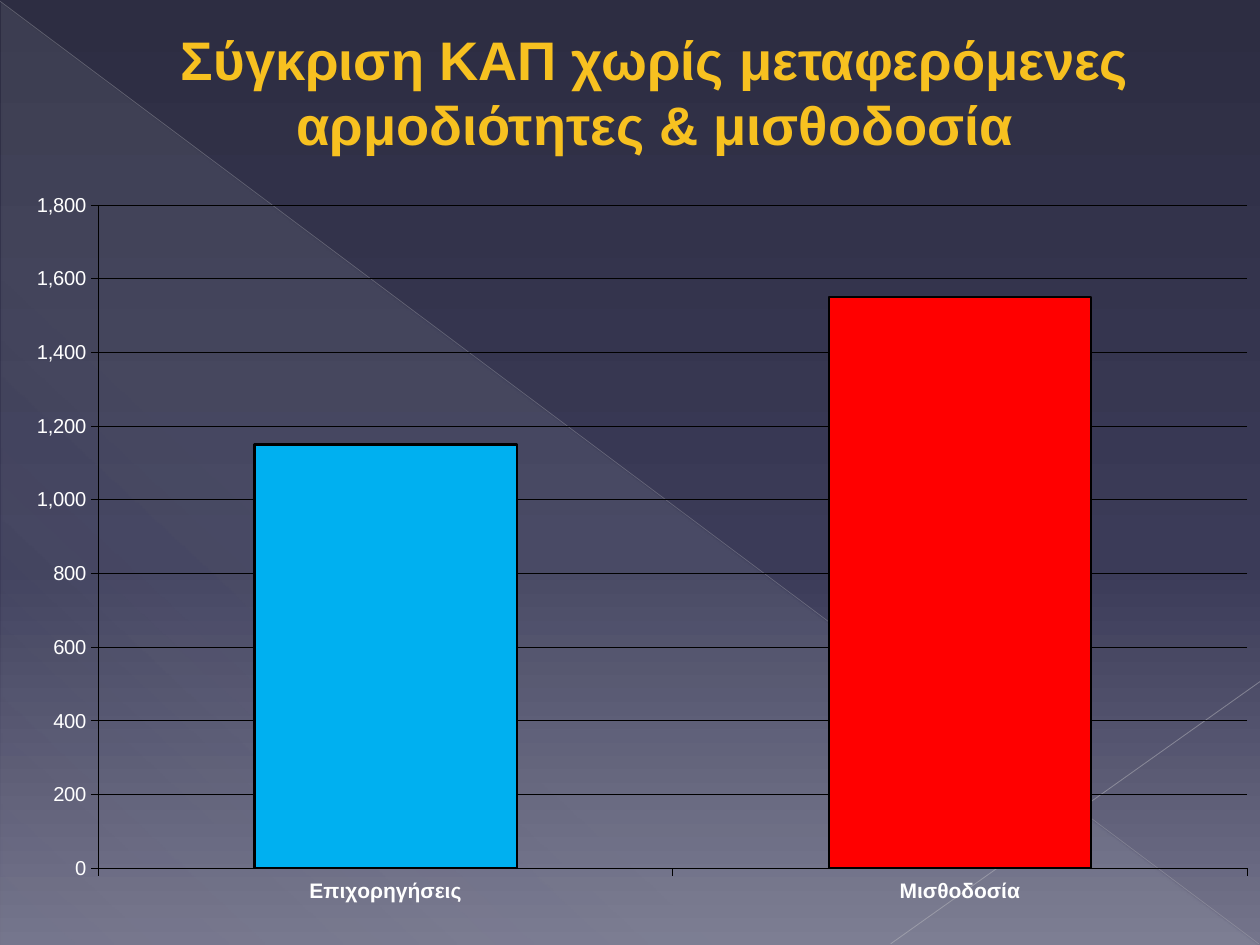
from lxml.etree import SubElement
from pptx import Presentation
from pptx.chart.data import CategoryChartData
from pptx.dml.color import RGBColor
from pptx.enum.chart import XL_CHART_TYPE as CT, XL_TICK_LABEL_POSITION as TLP, XL_TICK_MARK as TM
from pptx.enum.shapes import MSO_CONNECTOR as CONN, MSO_SHAPE as SHAPE
from pptx.enum.text import MSO_ANCHOR as ANCHOR, PP_ALIGN as ALIGN
from pptx.oxml import parse_xml
from pptx.oxml.ns import nsdecls, qn
from pptx.util import Pt

NIGHT = RGBColor(0x2D, 0x2D, 0x42)
INDIGO = RGBColor(0x3B, 0x3B, 0x58)
SLATE = RGBColor(0x74, 0x74, 0x8B)
MIST = RGBColor(0xDD, 0xE9, 0xEC)
GRAY = RGBColor(0xB8, 0xB8, 0xBC)
SILVER = RGBColor(0xC0, 0xC0, 0xC4)
GOLD = RGBColor(0xF7, 0xC1, 0x20)
STEEL = RGBColor(0x4F, 0x56, 0x71)
BLACK = RGBColor(0, 0, 0)
WHITE = RGBColor(0xFF, 0xFF, 0xFF)
LILAC = RGBColor(0x99, 0x99, 0xFF)
BLUE = RGBColor(0x00, 0xB0, 0xF0)
RED = RGBColor(0xFF, 0, 0)


class Deck:
    font = "Arial"
    hairline = Pt(0.34)

    def __init__(self, width, height):
        self.prs = Presentation()
        self.prs.slide_width, self.prs.slide_height = Pt(width), Pt(height)
        self.s = self.prs.slides.add_slide(self.prs.slide_layouts[6])

    def alpha(self, color, percent):
        SubElement(color, qn("a:alpha"), val=str(percent * 1000))

    def gradient(self, fill, element, angle, stops):
        fill.gradient()
        fill.gradient_angle = 360 - angle
        gs_list = next(element.iter(qn("a:gsLst")))
        for gs in list(gs_list):
            gs_list.remove(gs)
        for pos, rgb, opacity in stops:
            gs = SubElement(gs_list, qn("a:gs"), pos=str(pos * 1000))
            color = SubElement(gs, qn("a:srgbClr"), val=str(rgb))
            if opacity < 100:
                self.alpha(color, opacity)

    def background(self, angle, stops):
        self.gradient(self.s.background.fill, self.s.element, angle, stops)

    def triangle(self, x, y, w, h, angle, stops):
        sp = self.s.shapes.add_shape(SHAPE.RIGHT_TRIANGLE, Pt(x), Pt(y), Pt(w), Pt(h))
        sp.shadow.inherit = False
        sp.line.fill.background()
        self.gradient(sp.fill, sp.element, angle, stops)

    def line(self, x1, y1, x2, y2, rgb, width, opacity):
        cx = self.s.shapes.add_connector(CONN.STRAIGHT, Pt(x1), Pt(y1), Pt(x2), Pt(y2))
        cx.line.color.rgb, cx.line.width = rgb, Pt(width)
        sp_pr = cx.element.spPr
        self.alpha(next(sp_pr.iter(qn("a:srgbClr"))), opacity)
        SubElement(sp_pr, qn("a:effectLst"))

    def title(self, text, x, y, w, h, size, indent):
        tf = self.s.shapes.add_textbox(Pt(x), Pt(y), Pt(w), Pt(h)).text_frame
        tf.word_wrap, tf.vertical_anchor = True, ANCHOR.MIDDLE
        p = tf.paragraphs[0]
        p.alignment = ALIGN.CENTER
        p._p.get_or_add_pPr().set("marL", str(Pt(indent)))
        r = p.add_run()
        r.text = text
        self.style(r.font, size, GOLD, True)
        r.font._element.insert(0, parse_xml(
            f'<a:ln {nsdecls("a")} w="{Pt(0.5)}"><a:solidFill>'
            f'<a:srgbClr val="{STEEL}"/></a:solidFill></a:ln>'))

    def style(self, font, size, rgb, bold=False):
        font.name, font.size, font.bold = self.font, Pt(size), bold
        font.color.rgb = rgb

    def outline(self, line, width):
        line.color.rgb, line.width = BLACK, width

    def axis(self, axis, size, bold):
        axis.major_tick_mark, axis.minor_tick_mark = TM.OUTSIDE, TM.NONE
        self.style(axis.tick_labels.font, size, WHITE, bold)
        self.outline(axis.format.line, self.hairline)

    def columns(self, x, y, w, h, bars, plot_box):
        data = CategoryChartData(number_format="#,##0")
        data.categories = [name for name, _, _ in bars]
        data.add_series("Series 1", [value for _, value, _ in bars])
        chart = self.s.shapes.add_chart(
            CT.COLUMN_CLUSTERED, Pt(x), Pt(y), Pt(w), Pt(h), data).chart
        self.style(chart.font, 14.2, BLACK)
        chart.has_legend = chart.has_title = False
        plot = chart.plots[0]
        plot.gap_width, plot.vary_by_categories = 119, False
        series = plot.series[0]
        series.format.fill.solid()
        series.format.fill.fore_color.rgb = LILAC
        self.outline(series.format.line, Pt(1.35))
        for i, (_, _, rgb) in enumerate(bars):
            fmt = series.points[i].format
            fmt.fill.solid()
            fmt.fill.fore_color.rgb = rgb
            self.outline(fmt.line, Pt(1.35))
        cat, val = chart.category_axis, chart.value_axis
        self.axis(cat, 12, True)
        cat.tick_label_position = TLP.LOW
        self.axis(val, 11.5, False)
        val.minimum_scale, val.maximum_scale, val.major_unit = 0, 1800, 200
        val.tick_labels.number_format = "#,##0"
        val.tick_labels.number_format_is_linked = False
        self.outline(val.major_gridlines.format.line, self.hairline)
        self.place_plot(chart, plot_box)

    def place_plot(self, chart, box):
        area = next(chart.element.iter(qn("c:plotArea")))
        for old in area.findall(qn("c:layout")):
            area.remove(old)
        fields = [("layoutTarget", "inner"), ("xMode", "edge"), ("yMode", "edge")]
        fields += zip("xywh", box)
        inner = "".join(f'<c:{tag} val="{value}"/>' for tag, value in fields)
        area.insert(0, parse_xml(
            f'<c:layout {nsdecls("c")}><c:manualLayout>{inner}</c:manualLayout></c:layout>'))


def main():
    deck = Deck(720, 540)
    deck.background(90, [(0, NIGHT, 100), (60, INDIGO, 100), (100, SLATE, 100)])
    deck.triangle(0.7, 1.4, 718.6, 538.6, 133,
                  [(0, MIST, 10), (70, MIST, 8), (100, MIST, 1)])
    deck.line(0, 0.7, 719.3, 539.3, GRAY, 0.39, 35)
    deck.line(720, 389.5, 509, 539.3, SILVER, 0.47, 45)
    deck.title("Σύγκριση ΚΑΠ χωρίς μεταφερόμενες αρμοδιότητες & μισθοδοσία",
               31, 9.4, 648, 85, 31, 38)
    deck.columns(14.4, 100, 698.4, 430.6,
                 [("Επιχορηγήσεις", 1150, BLUE), ("Μισθοδοσία", 1550, RED)],
                 (0.06, 0.04, 0.94, 0.88))
    deck.prs.save("out.pptx")


if __name__ == "__main__":
    main()
